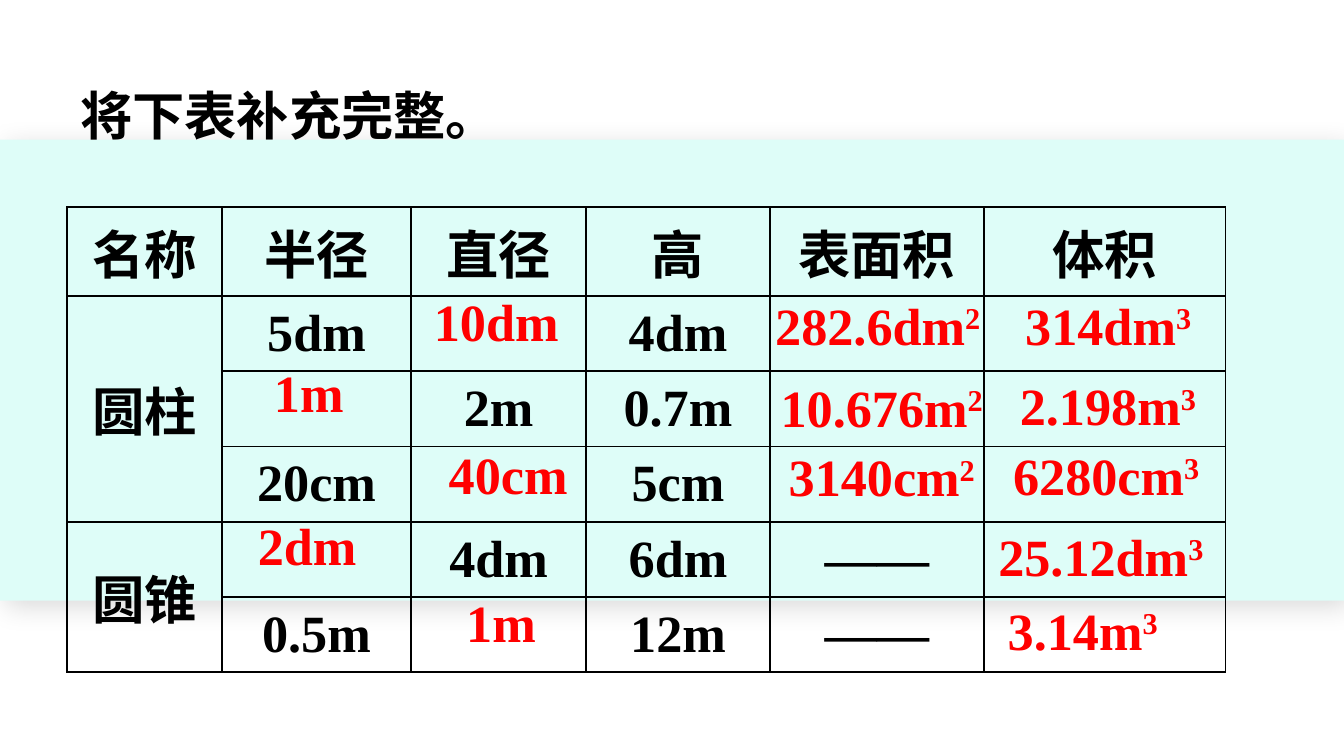
"""Build a slide with a table of cylinder and cone measurements and its answers."""
from lxml import etree
from pptx import Presentation
from pptx.dml.color import RGBColor
from pptx.enum.shapes import MSO_SHAPE
from pptx.enum.text import MSO_ANCHOR, PP_ALIGN
from pptx.oxml import parse_xml
from pptx.util import Inches, Pt

RECTANGLE = MSO_SHAPE.RECTANGLE
MIDDLE = MSO_ANCHOR.MIDDLE
CENTER = PP_ALIGN.CENTER
NS = "http://schemas.openxmlformats.org/drawingml/2006/main"
BLACK, RED, MINT = "000000", "FF0000", "DEFDF8"


def style(paragraph, color):
    font = paragraph.font
    font.name = "Times New Roman"
    font.size = Pt(28)
    font.bold = True
    font.color.rgb = RGBColor.from_string(color)


def add_label(left, top, width, height, text, color, power=""):
    frame = slide.shapes.add_textbox(
        Inches(left), Inches(top), Inches(width), Inches(height)).text_frame
    frame.word_wrap = True
    paragraph = frame.paragraphs[0]
    paragraph.add_run().text = text
    if power:
        exponent = paragraph.add_run()
        exponent.text = power
        exponent.font._element.set("baseline", "30000")
    style(paragraph, color)
    return paragraph


prs = Presentation()
prs.slide_width = Inches(10)
prs.slide_height = Inches(10) * 9 // 16
slide = prs.slides.add_slide(prs.slide_layouts[6])

band = slide.shapes.add_shape(RECTANGLE, 0, Inches(1.04), Inches(10), Inches(3.43))
band.fill.solid()
band.fill.fore_color.rgb = RGBColor.from_string(MINT)
band.line.fill.background()
band._element.spPr.append(parse_xml(
    f'<a:effectLst xmlns:a="{NS}"><a:outerShdw blurRad="{Pt(15)}" dist="{Pt(5)}" '
    f'dir="2700000" algn="ctr" rotWithShape="0"><a:srgbClr val="{BLACK}">'
    '<a:alpha val="15000"/></a:srgbClr></a:outerShdw></a:effectLst>'))

rows = [
    ["名称", "半径", "直径", "高", "表面积", "体积"],
    ["圆柱", "5dm", "", "4dm", "", ""],
    ["", "", "2m", "0.7m", "", ""],
    ["", "20cm", "", "5cm", "", ""],
    ["圆锥", "", "4dm", "6dm", "——", ""],
    ["", "0.5m", "", "12m", "——", ""],
]
widths = [1.15, 1.41, 1.3, 1.37, 1.59, 1.8]
solids = slide.shapes.add_table(
    len(rows), len(widths), Inches(0.5), Inches(1.54), Inches(8.62), Inches(3.37)).table
solids.first_row = solids.horz_banding = False
for column, width in zip(solids.columns, widths):
    column.width = Inches(width)
for r, row in enumerate(rows):
    solids.rows[r].height = Inches(0.56)
    for c, text in enumerate(row):
        cell = solids.cell(r, c)
        cell.text = text
        cell.vertical_anchor = MIDDLE
        cell.fill.background()
        paragraph = cell.text_frame.paragraphs[0]
        paragraph.alignment = CENTER
        style(paragraph, BLACK)
        for position, side in enumerate(("lnL", "lnR", "lnT", "lnB")):
            border = etree.fromstring(
                f'<a:{side} xmlns:a="{NS}" w="{Pt(1)}"><a:solidFill>'
                f'<a:srgbClr val="{BLACK}"/></a:solidFill></a:{side}>')
            cell._tc.tcPr.insert(position, border)
for first, last in ((1, 3), (4, 5)):
    solids.cell(first, 0).merge(solids.cell(last, 0))

title = add_label(0.5, 0.48, 3.77, 0.66, "将下表补充完整。", BLACK)
title.line_spacing = 1.2

answers = [
    (3.13, 2.1, 1.2, "10dm", ""),
    (5.67, 2.13, 1.94, "282.6dm", "2"),
    (7.53, 2.13, 1.54, "314dm", "3"),
    (1.94, 2.63, 0.8, "1m", ""),
    (5.71, 2.74, 1.72, "10.676m", "2"),
    (7.49, 2.73, 1.54, "2.198m", "3"),
    (3.24, 3.24, 1.19, "40cm", ""),
    (5.77, 3.26, 1.81, "3140cm", "2"),
    (7.44, 3.25, 1.76, "6280cm", "3"),
    (1.82, 3.77, 1.05, "2dm", ""),
    (7.33, 3.85, 2.07, "25.12dm", "3"),
    (3.37, 4.34, 1.02, "1m", ""),
    (7.4, 4.4, 1.86, "3.14m", "3"),
]
for left, top, width, value, power in answers:
    add_label(left, top, width, 0.57, value, RED, power)

prs.save("out.pptx")
